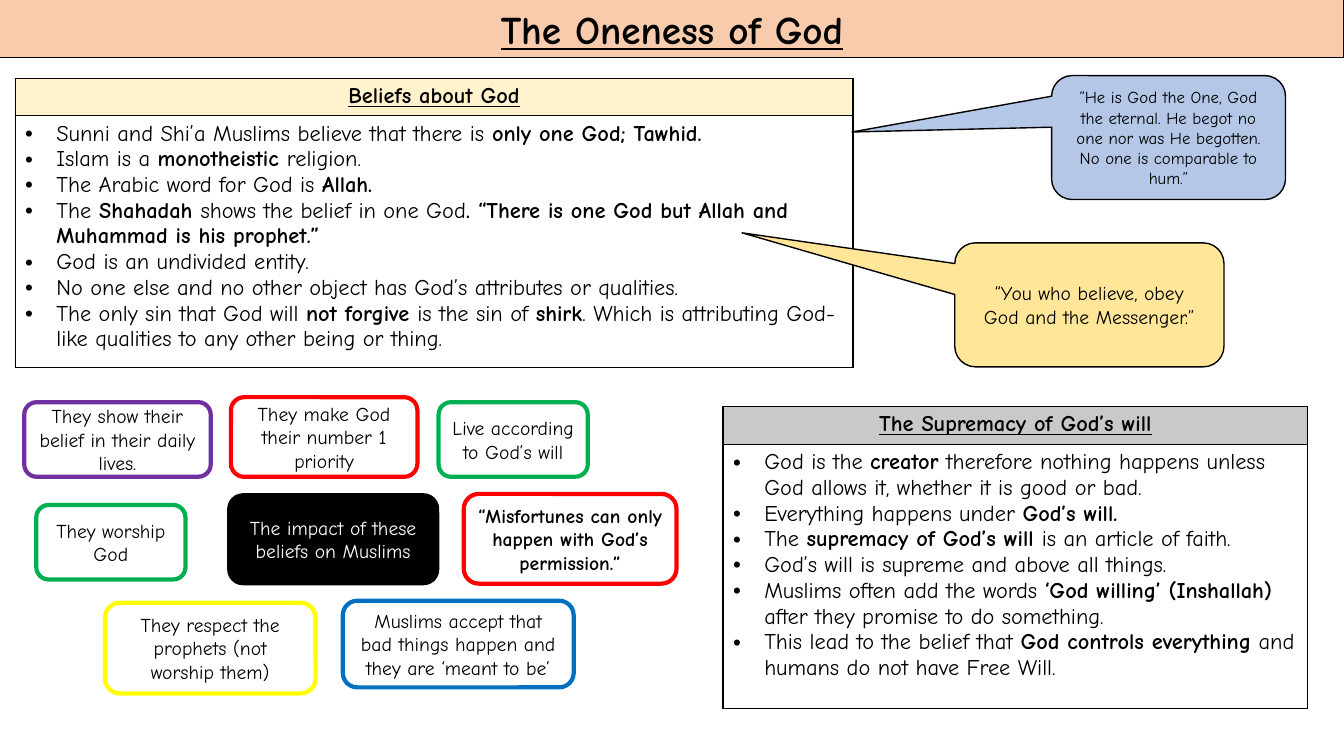
from dataclasses import dataclass

from lxml.etree import SubElement
from pptx import Presentation
from pptx.dml.color import RGBColor
from pptx.enum.shapes import MSO_SHAPE
from pptx.enum.text import MSO_ANCHOR, PP_ALIGN
from pptx.oxml.ns import qn
from pptx.util import Inches, Pt


@dataclass(frozen=True)
class Theme:
    font: str = "Comic Neue"
    black: str = "000000"
    white: str = "FFFFFF"
    peach: str = "F8CBAD"
    cream: str = "FFF2CC"
    grey: str = "C9C9C9"
    blue_tint: str = "B4C7E7"
    gold_tint: str = "FFE699"
    purple: str = "7030A0"
    red: str = "FF0000"
    green: str = "00B050"
    blue: str = "0070C0"
    yellow: str = "FFFF00"
    title_size: float = 28
    body_size: float = 16
    box_size: float = 14
    quote_size: float = 12
    box_line: float = 3
    thin_line: float = 1
    title_line: float = 0.75


THEME = Theme()
BULLET_INDENT = 0.31
CALLOUT_MARGIN = 0.16


@dataclass(frozen=True)
class Box:
    left: float
    top: float
    width: float
    height: float
    text: str
    line: str
    fill: str = THEME.white
    color: str = THEME.black
    line_width: float = THEME.box_line


@dataclass(frozen=True)
class Callout:
    left: float
    top: float
    width: float
    height: float
    tip: tuple[float, float]
    text: str
    fill: str
    size: float


@dataclass(frozen=True)
class Panel:
    left: float
    top: float
    width: float
    row_heights: tuple[float, float]
    heading: str
    heading_fill: str
    points: tuple[str, ...]


BOXES = (
    Box(2.26, 4.9, 2.09, 0.9, "The impact of these beliefs on Muslims",
        THEME.black, THEME.black, THEME.white, THEME.thin_line),
    Box(0.24, 3.99, 1.85, 0.74, "They show their belief in their daily lives.", THEME.purple),
    Box(4.6, 4.9, 2.11, 0.89, "**“Misfortunes can only happen with God’s permission.”**", THEME.red),
    Box(4.35, 3.99, 1.48, 0.74, "Live according to God’s will", THEME.green),
    Box(3.4, 5.96, 2.29, 0.86,
        "Muslims accept that bad things happen and they are ‘meant to be’", THEME.blue),
    Box(2.29, 3.94, 1.85, 0.79, "They make God their number 1 priority", THEME.red),
    Box(1.04, 5.98, 2.09, 0.9, "They respect the prophets (not worship them)", THEME.yellow),
    Box(0.36, 5.01, 1.48, 0.74, "They worship God", THEME.green),
)

CALLOUTS = (
    Callout(10.43, 0.75, 2.32, 1.23, (8.45, 1.31),
            "“He is God the One, God the eternal. He begot no one nor was He begotten. "
            "No one is comparable to hum.”", THEME.blue_tint, THEME.quote_size),
    Callout(9.47, 2.41, 2.67, 1.23, (7.36, 2.31),
            "“You who believe, obey God and the Messenger.”", THEME.gold_tint, THEME.box_size),
)

PANELS = (
    Panel(0.15, 0.78, 8.31, (0.37, 2.5), "Beliefs about God", THEME.cream, (
        "Sunni and Shi’a Muslims believe that there is **only one God; Tawhid.**",
        "Islam is a **monotheistic **religion.",
        "The Arabic word for God is **Allah.**",
        "The** Shahadah **shows the belief in one God**. “There is one God but Allah "
        "and Muhammad is his prophet.”**",
        "God is an undivided entity.",
        "No one else and no other object has God’s attributes or qualities.",
        "The only sin that God will **not forgive **is the sin of **shirk**. Which is "
        "attributing God-like qualities to any other being or thing.",
    )),
    Panel(7.17, 4.03, 5.8, (0.38, 2.62), "The Supremacy of God’s will", THEME.grey, (
        "God is the **creator** therefore nothing happens unless God allows it, "
        "whether it is good or bad.",
        "Everything happens under **God’s will.**",
        "The **supremacy of God’s will **is an article of faith.",
        "God’s will is supreme and above all things.",
        "Muslims often add the words **‘God willing’ (Inshallah) **after they "
        "promise to do something.",
        "This lead to the belief that **God controls everything** and humans do "
        "not have Free Will.",
    )),
)


def write(frame, *paragraphs: str, size: float, color: str = THEME.black,
          underline: bool = False, bullets: bool = False) -> None:
    """Fill a text frame; ** switches bold on and off within a paragraph."""
    for index, text in enumerate(paragraphs):
        paragraph = frame.add_paragraph() if index else frame.paragraphs[0]
        paragraph.alignment = PP_ALIGN.LEFT if bullets else PP_ALIGN.CENTER
        if bullets:
            add_bullet(paragraph)
        for part, words in enumerate(text.split("**")):
            if not words:
                continue
            run = paragraph.add_run()
            run.text = words
            run.font.name = THEME.font
            run.font.size = Pt(size)
            run.font.bold = part % 2 == 1
            run.font.underline = underline
            run.font.color.rgb = RGBColor.from_string(color)


def add_bullet(paragraph) -> None:
    properties = paragraph._p.get_or_add_pPr()
    properties.set("marL", str(Inches(BULLET_INDENT)))
    properties.set("indent", str(-Inches(BULLET_INDENT)))
    SubElement(properties, qn("a:buFont"), typeface="Arial")
    SubElement(properties, qn("a:buChar"), char="•")


def add_outlined(slide, kind: MSO_SHAPE, left: float, top: float, width: float,
                 height: float, fill: str, line: str, line_width: float):
    shape = slide.shapes.add_shape(kind, Inches(left), Inches(top), Inches(width), Inches(height))
    shape.shadow.inherit = False
    shape.fill.solid()
    shape.fill.fore_color.rgb = RGBColor.from_string(fill)
    shape.line.color.rgb = RGBColor.from_string(line)
    shape.line.width = Pt(line_width)
    shape.text_frame.word_wrap = True
    shape.text_frame.vertical_anchor = MSO_ANCHOR.MIDDLE
    return shape


def add_box(slide, box: Box) -> None:
    shape = add_outlined(slide, MSO_SHAPE.ROUNDED_RECTANGLE, box.left, box.top, box.width,
                         box.height, box.fill, box.line, box.line_width)
    write(shape.text_frame, box.text, size=THEME.box_size, color=box.color)


def add_callout(slide, callout: Callout) -> None:
    shape = add_outlined(slide, MSO_SHAPE.ROUNDED_RECTANGULAR_CALLOUT, callout.left, callout.top,
                         callout.width, callout.height, callout.fill, THEME.black, THEME.thin_line)
    tip_x, tip_y = callout.tip
    shape.adjustments[0] = (tip_x - callout.left) / callout.width - 0.5
    shape.adjustments[1] = (tip_y - callout.top) / callout.height - 0.5
    shape.text_frame.margin_left = shape.text_frame.margin_right = Inches(CALLOUT_MARGIN)
    write(shape.text_frame, callout.text, size=callout.size)


def style_cell(cell, fill: str) -> None:
    properties = cell._tc.get_or_add_tcPr()
    for side in ("lnL", "lnR", "lnT", "lnB"):
        border = SubElement(properties, qn(f"a:{side}"), w=str(Pt(THEME.thin_line)))
        SubElement(SubElement(border, qn("a:solidFill")), qn("a:srgbClr"), val=THEME.black)
    cell.fill.solid()
    cell.fill.fore_color.rgb = RGBColor.from_string(fill)


def add_panel(slide, panel: Panel) -> None:
    table = slide.shapes.add_table(2, 1, Inches(panel.left), Inches(panel.top), Inches(panel.width),
                                   Inches(sum(panel.row_heights))).table
    for row, height in zip(table.rows, panel.row_heights):
        row.height = Inches(height)
    heading, body = table.cell(0, 0), table.cell(1, 0)
    style_cell(heading, panel.heading_fill)
    style_cell(body, THEME.white)
    write(heading.text_frame, f"**{panel.heading}**", size=THEME.body_size, underline=True)
    write(body.text_frame, *panel.points, size=THEME.body_size, bullets=True)


def main() -> None:
    presentation = Presentation()
    presentation.slide_width, presentation.slide_height = Inches(13.33), Inches(7.5)
    slide = presentation.slides.add_slide(presentation.slide_layouts[6])
    banner = add_outlined(slide, MSO_SHAPE.RECTANGLE, 0, 0, 13.33, 0.57,
                          THEME.peach, THEME.black, THEME.title_line)
    write(banner.text_frame, "**The Oneness of God**", size=THEME.title_size, underline=True)
    for panel in PANELS:
        add_panel(slide, panel)
    for box in BOXES:
        add_box(slide, box)
    for callout in CALLOUTS:
        add_callout(slide, callout)
    presentation.save("out.pptx")


if __name__ == "__main__":
    main()
